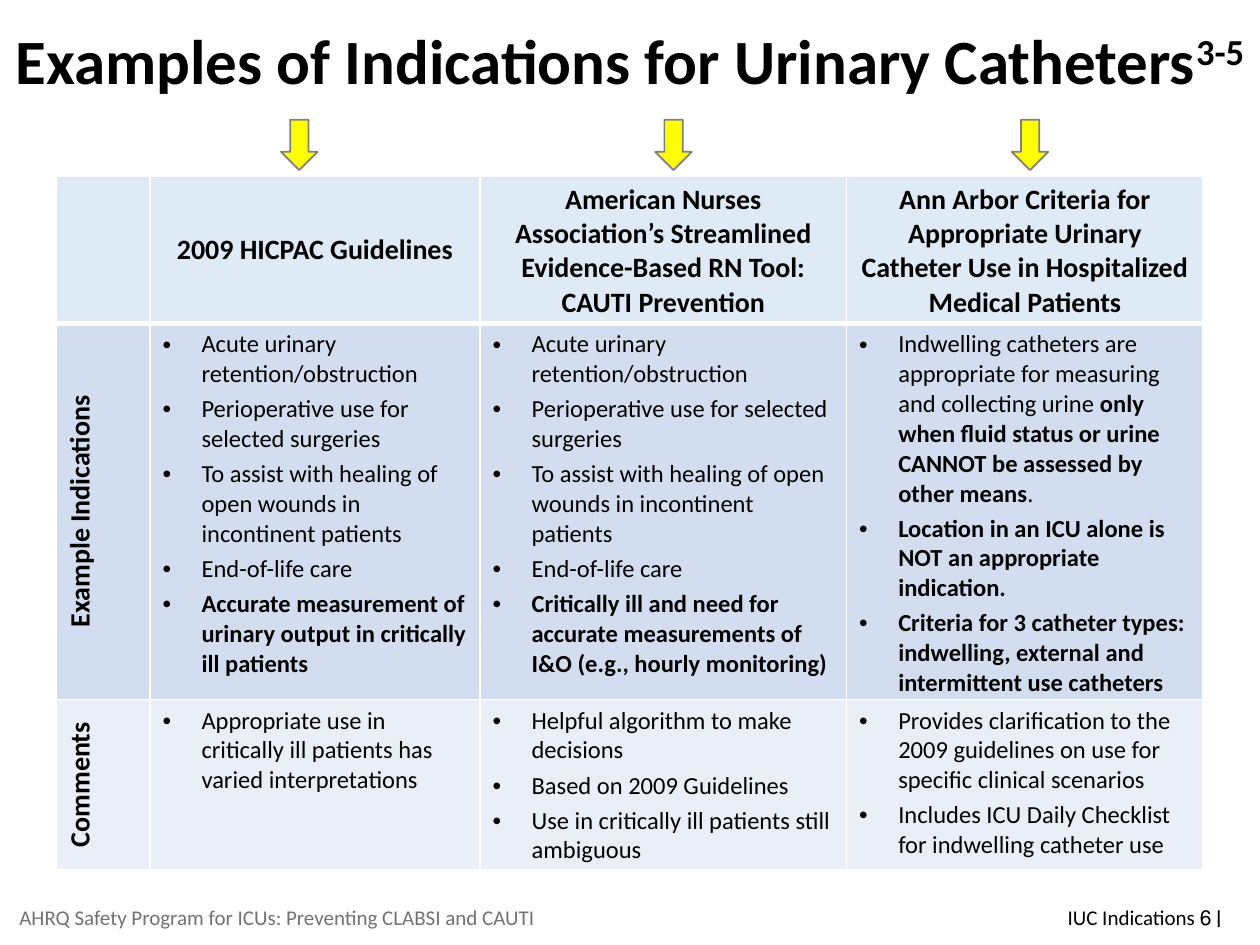
from dataclasses import dataclass

from lxml.etree import SubElement
from pptx import Presentation
from pptx.dml.color import RGBColor
from pptx.enum.shapes import MSO_SHAPE
from pptx.enum.text import MSO_ANCHOR, PP_ALIGN
from pptx.oxml.ns import qn
from pptx.util import Inches, Pt


@dataclass(frozen=True)
class Theme:
    font: str = "Calibri"
    separator_font: str = "Lato"
    black: str = "000000"
    white: str = "FFFFFF"
    footer_gray: str = "767171"
    arrow_fill: str = "FFFF00"
    arrow_line: str = "808080"
    header_fill: str = "DEEBF7"
    indications_fill: str = "D2DEEF"
    comments_fill: str = "EAEFF7"
    title_size: int = 36
    heading_size: int = 16
    body_size: int = 14
    footer_size: int = 12


@dataclass(frozen=True)
class Span:
    text: str
    bold: bool = False
    font: str | None = None
    superscript: bool = False


@dataclass(frozen=True)
class TextBox:
    left: float
    top: float
    width: float
    height: float
    spans: tuple[Span, ...]
    size: int
    color: str
    alignment: PP_ALIGN = PP_ALIGN.CENTER
    line_spacing: float | None = None


@dataclass(frozen=True)
class BodyRow:
    label: str
    fill: str
    columns: tuple


THEME = Theme()
COLUMN_WIDTHS = (0.74, 2.62, 2.91, 2.83)
ROW_HEIGHTS = (1.16, 2.9, 0.94)
ARROW_LEFTS = (2.23, 5.2, 8.03)

HEADINGS = (
    "2009 HICPAC Guidelines",
    "American Nurses Association’s Streamlined Evidence-Based RN Tool: CAUTI Prevention",
    "Ann Arbor Criteria for Appropriate Urinary Catheter Use in Hospitalized Medical Patients",
)
SHARED_INDICATIONS = (
    (Span("Acute urinary retention/obstruction"),),
    (Span("Perioperative use for selected surgeries"),),
    (Span("To assist with healing of open wounds in incontinent patients"),),
    (Span("End-of-life care"),),
)
BODY_ROWS = (
    BodyRow("Example Indications", THEME.indications_fill, (
        SHARED_INDICATIONS + (
            (Span("Accurate measurement of urinary output in critically ill patients", True),),
        ),
        SHARED_INDICATIONS + (
            (Span("Critically ill and need for accurate measurements of I&O "
                  "(e.g., hourly monitoring)", True),),
        ),
        (
            (Span("Indwelling catheters are appropriate for measuring and collecting urine "),
             Span("only when fluid status or urine CANNOT be assessed by other means", True),
             Span(".")),
            (Span("Location in an ICU alone is NOT an appropriate indication.", True),),
            (Span("Criteria for 3 catheter types: indwelling, external and "
                  "intermittent use catheters", True),),
        ),
    )),
    BodyRow("Comments", THEME.comments_fill, (
        (
            (Span("Appropriate use in critically ill patients has varied interpretations"),),
        ),
        (
            (Span("Helpful algorithm to make decisions"),),
            (Span("Based on 2009 Guidelines"),),
            (Span("Use in critically ill patients still ambiguous"),),
        ),
        (
            (Span("Provides clarification to the 2009 guidelines on use for "
                  "specific clinical scenarios"),),
            (Span("Includes ICU Daily Checklist for indwelling catheter use"),),
        ),
    )),
)
TITLE = TextBox(
    0, 0.01, 10, 0.89,
    (Span("Examples of Indications for Urinary Catheters", True),
     Span("3-5", True, superscript=True)),
    THEME.title_size, THEME.black, line_spacing=1.05,
)
FOOTERS = (
    TextBox(0, 7.08, 4.4, 0.4,
            (Span("AHRQ Safety Program for ICUs: Preventing CLABSI and CAUTI"),),
            THEME.footer_size, THEME.footer_gray),
    TextBox(7.54, 7.08, 2.25, 0.4,
            (Span("IUC Indications "), Span("׀ ", font=THEME.separator_font), Span("6")),
            THEME.footer_size, THEME.black, PP_ALIGN.RIGHT),
)


def rgb(color: str) -> RGBColor:
    return RGBColor.from_string(color)


def write_spans(paragraph, spans: tuple[Span, ...], size: int, color: str) -> None:
    font = paragraph.font
    font.name = THEME.font
    font.size = Pt(size)
    font.color.rgb = rgb(color)
    same_weight = len({span.bold for span in spans}) == 1
    if same_weight:
        font.bold = spans[0].bold
    for span in spans:
        run = paragraph.add_run()
        run.text = span.text
        if not same_weight:
            run.font.bold = span.bold
        if span.font:
            run.font.name = span.font
        if span.superscript:
            run._r.get_or_add_rPr().set("baseline", "30000")


def add_text(slide, box: TextBox) -> None:
    shape = slide.shapes.add_textbox(
        Inches(box.left), Inches(box.top), Inches(box.width), Inches(box.height))
    frame = shape.text_frame
    frame.word_wrap = True
    frame.vertical_anchor = MSO_ANCHOR.MIDDLE
    paragraph = frame.paragraphs[0]
    paragraph.alignment = box.alignment
    if box.line_spacing:
        paragraph.line_spacing = box.line_spacing
    write_spans(paragraph, box.spans, box.size, box.color)


def add_arrow(slide, left: float) -> None:
    arrow = slide.shapes.add_shape(
        MSO_SHAPE.UP_ARROW, Inches(left), Inches(0.95), Inches(0.29), Inches(0.4))
    arrow.rotation = 180
    arrow.shadow.inherit = False
    arrow.fill.solid()
    arrow.fill.fore_color.rgb = rgb(THEME.arrow_fill)
    arrow.line.color.rgb = rgb(THEME.arrow_line)
    arrow.line.width = Pt(1)


def style_cell(cell, fill: str, top: int = 1, bottom: int = 1) -> None:
    properties = cell._tc.get_or_add_tcPr()
    for side, width in (("L", 1), ("R", 1), ("T", top), ("B", bottom)):
        line = SubElement(properties, qn(f"a:ln{side}"), w=str(Pt(width)))
        SubElement(SubElement(line, qn("a:solidFill")), qn("a:srgbClr"), val=THEME.white)
    cell.fill.solid()
    cell.fill.fore_color.rgb = rgb(fill)


def write_heading(cell, text: str, vertical: bool = False) -> None:
    cell.vertical_anchor = MSO_ANCHOR.MIDDLE
    if vertical:
        cell._tc.get_or_add_tcPr().set("vert", "vert270")
    paragraph = cell.text_frame.paragraphs[0]
    paragraph.alignment = PP_ALIGN.CENTER
    write_spans(paragraph, (Span(text, True),), THEME.heading_size, THEME.black)


def write_bullets(cell, items: tuple) -> None:
    frame = cell.text_frame
    for index, spans in enumerate(items):
        paragraph = frame.add_paragraph() if index else frame.paragraphs[0]
        paragraph.space_after = Pt(3)
        properties = paragraph._p.get_or_add_pPr()
        properties.set("marL", str(Inches(0.31)))
        properties.set("indent", str(-Inches(0.31)))
        SubElement(properties, qn("a:buFont"), typeface="Arial")
        SubElement(properties, qn("a:buChar"), char="•")
        write_spans(paragraph, spans, THEME.body_size, THEME.black)


def add_indications_table(slide) -> None:
    table = slide.shapes.add_table(
        len(ROW_HEIGHTS), len(COLUMN_WIDTHS),
        Inches(0.45), Inches(1.4), Inches(9.1), Inches(5)).table
    table.first_row = False
    table.horz_banding = False
    for column, width in zip(table.columns, COLUMN_WIDTHS):
        column.width = Inches(width)
    for row, height in zip(table.rows, ROW_HEIGHTS):
        row.height = Inches(height)
    for column in range(len(COLUMN_WIDTHS)):
        style_cell(table.cell(0, column), THEME.header_fill, bottom=3)
    for column, heading in enumerate(HEADINGS, 1):
        write_heading(table.cell(0, column), heading)
    for row, content in enumerate(BODY_ROWS, 1):
        for column in range(len(COLUMN_WIDTHS)):
            style_cell(table.cell(row, column), content.fill, top=3 if row == 1 else 1)
        write_heading(table.cell(row, 0), content.label, vertical=True)
        for column, items in enumerate(content.columns, 1):
            write_bullets(table.cell(row, column), items)


def main() -> None:
    presentation = Presentation()
    presentation.slide_width = Inches(10)
    presentation.slide_height = Inches(7.5)
    slide = presentation.slides.add_slide(presentation.slide_layouts[6])
    add_text(slide, TITLE)
    add_indications_table(slide)
    for left in ARROW_LEFTS:
        add_arrow(slide, left)
    for footer in FOOTERS:
        add_text(slide, footer)
    presentation.save("out.pptx")


if __name__ == "__main__":
    main()
